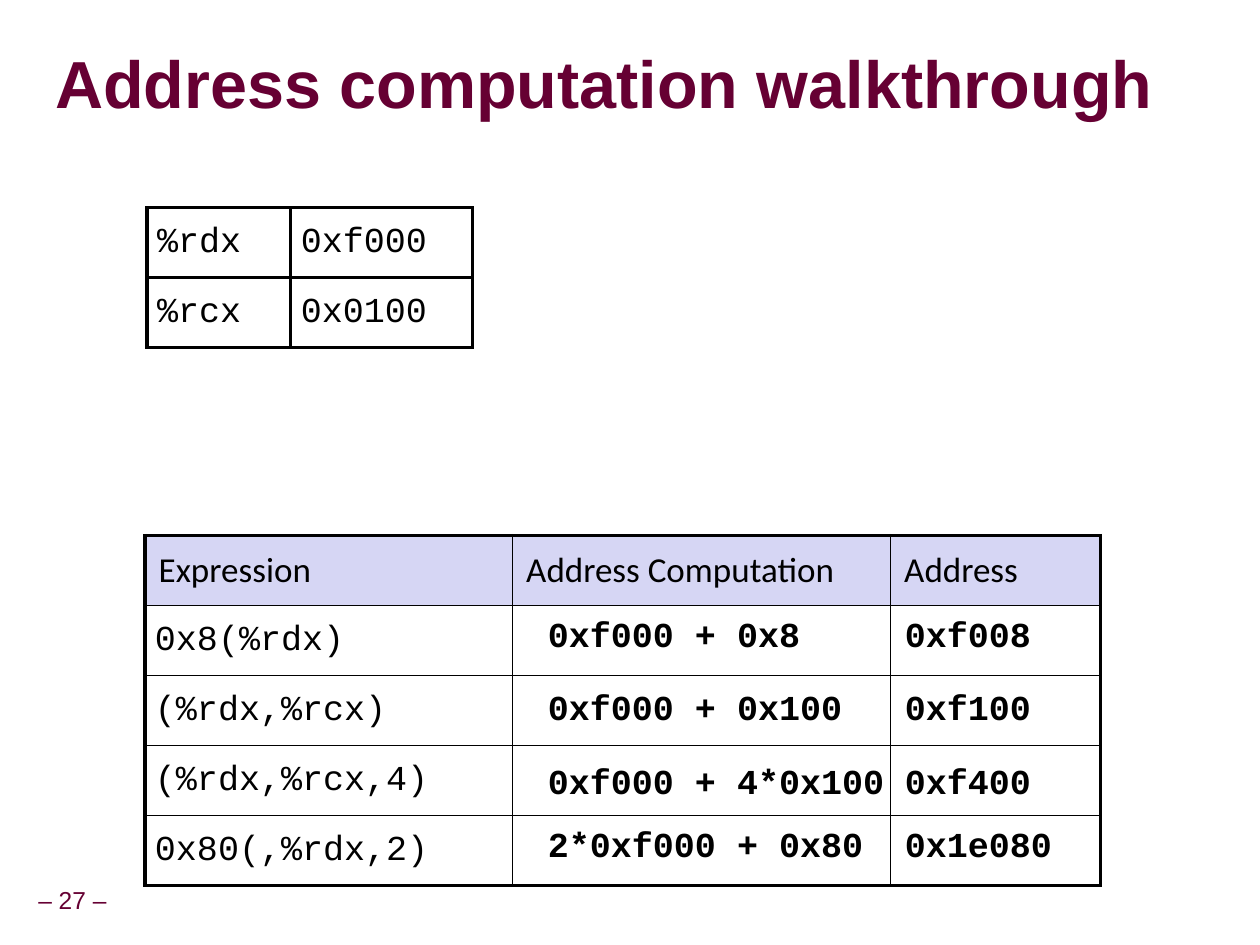
"""Builds the address computation walkthrough slide."""
from dataclasses import dataclass
from typing import NamedTuple

from lxml import etree
from pptx import Presentation
from pptx.dml.color import RGBColor
from pptx.enum.text import MSO_ANCHOR, MSO_AUTO_SIZE, PP_ALIGN
from pptx.oxml.ns import qn
from pptx.util import Emu, Inches, Pt

MIDDLE, TOP = MSO_ANCHOR.MIDDLE, MSO_ANCHOR.TOP
LEFT, CENTER = PP_ALIGN.LEFT, PP_ALIGN.CENTER
GROW, FIXED = MSO_AUTO_SIZE.SHAPE_TO_FIT_TEXT, MSO_AUTO_SIZE.NONE
SLIDE_WIDTH, SLIDE_HEIGHT = Inches(10), Inches(7.5)
GRID_COLUMNS = 120
UNIT = SLIDE_WIDTH / GRID_COLUMNS
ROW_UNITS = 6.67
ADDRESS_TAB = 34


class Font(NamedTuple):
    name: str
    size: float
    color: str
    bold: bool = False


@dataclass(frozen=True)
class Theme:
    black: str = "000000"
    white: str = "FFFFFF"
    header_fill: str = "D6D6F4"
    title: Font = Font("Arial", 38, "660033", True)
    footer: Font = Font("Arial", 14, "660033")
    header: Font = Font("Calibri", 20, "000000")
    code: Font = Font("Courier New", 20, "000000")
    answer: Font = Font("Courier New", 20, "000000", True)


THEME = Theme()


@dataclass(frozen=True)
class Label:
    text: str
    left: float
    top: float
    width: float
    height: float
    font: Font
    anchor: MSO_ANCHOR = MIDDLE
    align: PP_ALIGN = LEFT
    spacing: float = 0.9
    insets: tuple[float, float] = (0, 0)
    wrap: bool = True
    size_mode: MSO_AUTO_SIZE = FIXED
    tab: float = 0


@dataclass(frozen=True)
class Grid:
    left: float
    top: float
    columns: tuple[float, ...]
    rows: tuple[tuple[str, ...], ...]
    outer: float
    inner: float
    has_header: bool = False
    spacing: float = 1.0


REGISTERS = Grid(14, 19.8, (13.7, 17.3),
                 (("%rdx", "0xf000"), ("%rcx", "0x0100")), 2, 2)
EXPRESSIONS = Grid(13.8, 51, (35, 36, 20), (
    ("Expression", "Address Computation", "Address"),
    ("0x8(%rdx)", "", ""),
    ("(%rdx,%rcx)", "", ""),
    ("(%rdx,%rcx,4)", "", ""),
    ("0x80(,%rdx,2)", "", ""),
), 2.25, 1, True, 0.95)
ANSWERS = (
    (58, "0xf000 + 0x8", "0xf008"),
    (65, "0xf000 + 0x100", "0xf100"),
    (72, "0xf000 + 4*0x100", "0xf400"),
    (78, "2*0xf000 + 0x80", "0x1e080"),
)
TITLE = Label("Address computation walkthrough", 5.25, 3.25, 114.25, 10,
              THEME.title, spacing=0.91)
PAGE_NUMBER = Label("– 27 –", -1.1, 84, 16, 3.7, THEME.footer, align=CENTER,
                    insets=(0.05, 0.05), wrap=False, size_mode=GROW)


def units(count: float) -> Emu:
    """Turn grid units into a length."""
    return Emu(round(count * UNIT))


def assign(target: object, values: dict[str, object]) -> None:
    """Set each named attribute of the target."""
    for name, value in values.items():
        setattr(target, name, value)


def write(para, text: str, font: Font, spacing: float) -> None:
    """Put one formatted span into a paragraph."""
    para.line_spacing = spacing
    span = para.add_run()
    span.text = text
    assign(span.font, {"name": font.name, "size": Pt(font.size), "bold": font.bold})
    span.font.color.rgb = RGBColor.from_string(font.color)


def draw_label(page, label: Label) -> None:
    """Draw one text box."""
    box = page.shapes.add_textbox(
        *map(units, (label.left, label.top, label.width, label.height)))
    side, edge = map(Inches, label.insets)
    assign(box.text_frame, {
        "word_wrap": label.wrap, "auto_size": label.size_mode,
        "vertical_anchor": label.anchor, "margin_left": side,
        "margin_right": side, "margin_top": edge, "margin_bottom": edge})
    para = box.text_frame.paragraphs[0]
    para.alignment = label.align
    write(para, label.text, label.font, label.spacing)
    if label.tab:
        stops = etree.SubElement(para._p.get_or_add_pPr(), qn("a:tabLst"))
        etree.SubElement(stops, qn("a:tab"), pos=str(units(label.tab)), algn="l")


def draw_border(cell, side: str, points: float) -> None:
    """Add a solid line to one side of a cell."""
    line = etree.SubElement(cell._tc.get_or_add_tcPr(), qn(f"a:ln{side}"),
                            w=str(Pt(points)))
    fill = etree.SubElement(line, qn("a:solidFill"))
    etree.SubElement(fill, qn("a:srgbClr"), val=THEME.black)


def draw_table(page, grid: Grid) -> None:
    """Draw a table with an outer frame and inner rules."""
    row_count, column_count = len(grid.rows), len(grid.columns)
    table = page.shapes.add_table(
        row_count, column_count, units(grid.left), units(grid.top),
        units(sum(grid.columns)), units(ROW_UNITS * row_count)).table
    assign(table, {"first_row": grid.has_header, "horz_banding": False})
    for column, width in zip(table.columns, grid.columns):
        column.width = units(width)
    for r, texts in enumerate(grid.rows):
        table.rows[r].height = units(ROW_UNITS)
        is_header = grid.has_header and r == 0
        margin = Inches(0.11 if is_header else 0.08)
        for c, text in enumerate(texts):
            cell = table.cell(r, c)
            on_frame = {"L": c == 0, "R": c == column_count - 1,
                        "T": r == 0, "B": r == row_count - 1}
            for side, is_outer in on_frame.items():
                draw_border(cell, side, grid.outer if is_outer else grid.inner)
            cell.fill.solid()
            cell.fill.fore_color.rgb = RGBColor.from_string(
                THEME.header_fill if is_header else THEME.white)
            assign(cell, {"vertical_anchor": MIDDLE, "margin_left": margin,
                          "margin_right": margin, "margin_top": margin,
                          "margin_bottom": margin})
            if text:
                write(cell.text_frame.paragraphs[0], text,
                      THEME.header if is_header else THEME.code, grid.spacing)


def main() -> None:
    """Build and save the deck."""
    deck = Presentation()
    assign(deck, {"slide_width": SLIDE_WIDTH, "slide_height": SLIDE_HEIGHT})
    page = deck.slides.add_slide(deck.slide_layouts[6])
    draw_label(page, PAGE_NUMBER)
    for grid in (EXPRESSIONS, REGISTERS):
        draw_table(page, grid)
    draw_label(page, TITLE)
    for top, computation, address in ANSWERS:
        draw_label(page, Label(
            f"{computation}\t{address}", 51, top, 53, 5, THEME.answer, TOP,
            spacing=0.95, insets=(0.1, 0.05), size_mode=GROW, tab=ADDRESS_TAB))
    deck.save("out.pptx")


if __name__ == "__main__":
    main()
